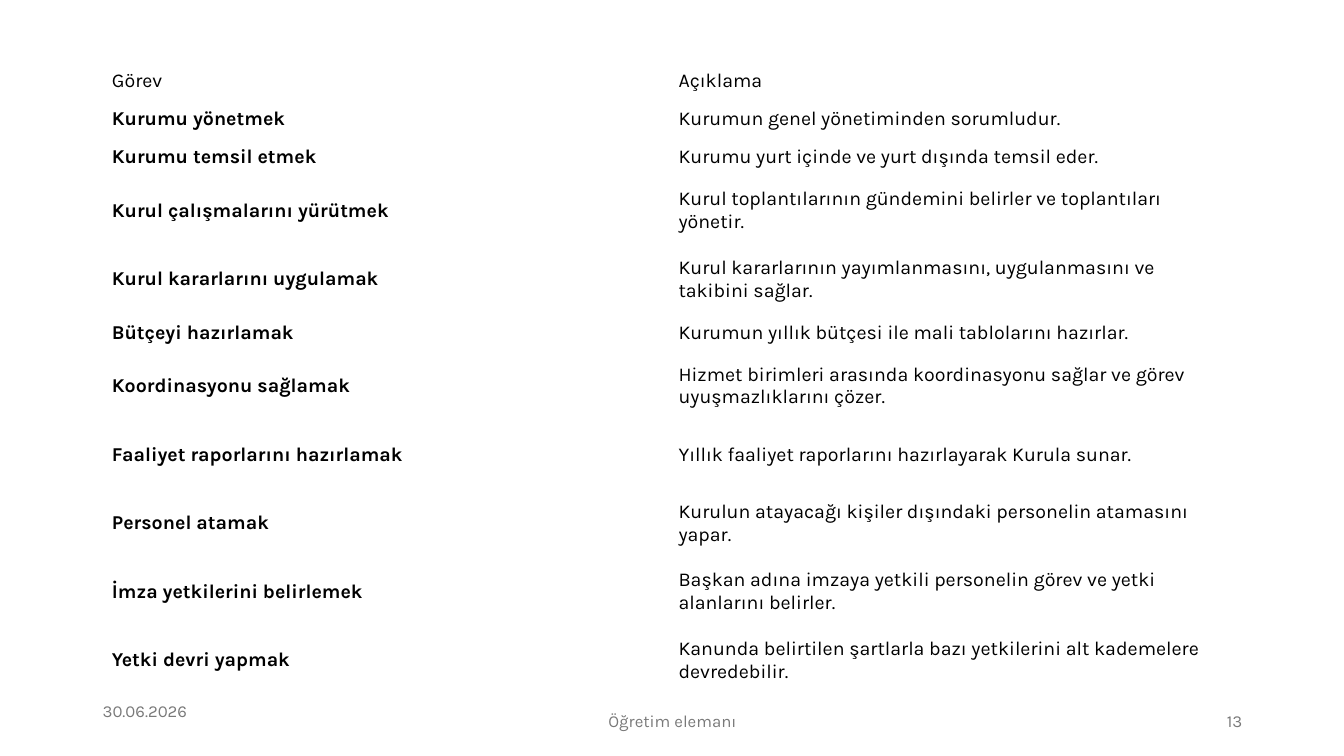
from pptx import Presentation
from pptx.dml.color import RGBColor
from pptx.enum import text
from pptx.util import Inches, Pt

BLACK = RGBColor(0x00, 0x00, 0x00)
GRAY = RGBColor(0x79, 0x79, 0x79)
WHITE = RGBColor(0xFF, 0xFF, 0xFF)
SHORT, TALL = 0.38, 0.68

DUTIES = [
    (SHORT, "Görev", "Açıklama"),
    (SHORT, "Kurumu yönetmek", "Kurumun genel yönetiminden sorumludur."),
    (SHORT, "Kurumu temsil etmek", "Kurumu yurt içinde ve yurt dışında temsil eder."),
    (TALL, "Kurul çalışmalarını yürütmek",
     "Kurul toplantılarının gündemini belirler ve toplantıları yönetir."),
    (TALL, "Kurul kararlarını uygulamak",
     "Kurul kararlarının yayımlanmasını, uygulanmasını ve takibini sağlar."),
    (SHORT, "Bütçeyi hazırlamak", "Kurumun yıllık bütçesi ile mali tablolarını hazırlar."),
    (TALL, "Koordinasyonu sağlamak",
     "Hizmet birimleri arasında koordinasyonu sağlar ve görev uyuşmazlıklarını çözer."),
    (TALL, "Faaliyet raporlarını hazırlamak",
     "Yıllık faaliyet raporlarını hazırlayarak Kurula sunar."),
    (TALL, "Personel atamak",
     "Kurulun atayacağı kişiler dışındaki personelin atamasını yapar."),
    (TALL, "İmza yetkilerini belirlemek",
     "Başkan adına imzaya yetkili personelin görev ve yetki alanlarını belirler."),
    (TALL, "Yetki devri yapmak",
     "Kanunda belirtilen şartlarla bazı yetkilerini alt kademelere devredebilir."),
]
FOOTER = [
    (0.92, 3, "30.06.2026", text.PP_ALIGN.LEFT),
    (4.42, 4.5, "Öğretim elemanı", text.PP_ALIGN.CENTER),
    (9.42, 3, "13", text.PP_ALIGN.RIGHT),
]
CELL_FORMAT = {
    "vertical_anchor": text.MSO_ANCHOR.MIDDLE,
    "margin_left": Inches(0.08), "margin_right": Inches(0.08),
    "margin_top": Inches(0.04), "margin_bottom": Inches(0.04),
}


def write(p, words, size, color, bold=False):
    r = p.add_run()
    r.text = words
    for name, value in {"name": "Karla", "size": Pt(size), "bold": bold}.items():
        setattr(r.font, name, value)
    r.font.color.rgb = color


prs = Presentation()
prs.slide_width, prs.slide_height = Inches(13.33), Inches(7.5)
s = prs.slides.add_slide(prs.slide_layouts[6])

height = sum(duty[0] for duty in DUTIES)
table = s.shapes.add_table(len(DUTIES), 2, Inches(1.03), Inches(0.61),
                           Inches(11.24), Inches(height)).table
table.first_row = table.horz_banding = False
for i, (row_height, *words) in enumerate(DUTIES):
    table.rows[i].height = Inches(row_height)
    for j, phrase in enumerate(words):
        cell = table.cell(i, j)
        cell.fill.solid()
        cell.fill.fore_color.rgb = WHITE
        for name, value in CELL_FORMAT.items():
            setattr(cell, name, value)
        write(cell.text_frame.paragraphs[0], phrase, 14, BLACK, i > 0 and j == 0)

footers = []
for left, width, words, align in FOOTER:
    sp = s.shapes.add_textbox(Inches(left), Inches(6.95), Inches(width), Inches(0.4))
    tf = sp.text_frame
    tf.word_wrap = True
    tf.vertical_anchor = text.MSO_ANCHOR.MIDDLE
    p = tf.paragraphs[0]
    p.alignment = align
    write(p, words, 12, GRAY)
    footers.append(tf)

date = footers[0]
date.margin_top, date.margin_bottom = Inches(0), Inches(0.19)

prs.save("out.pptx")
